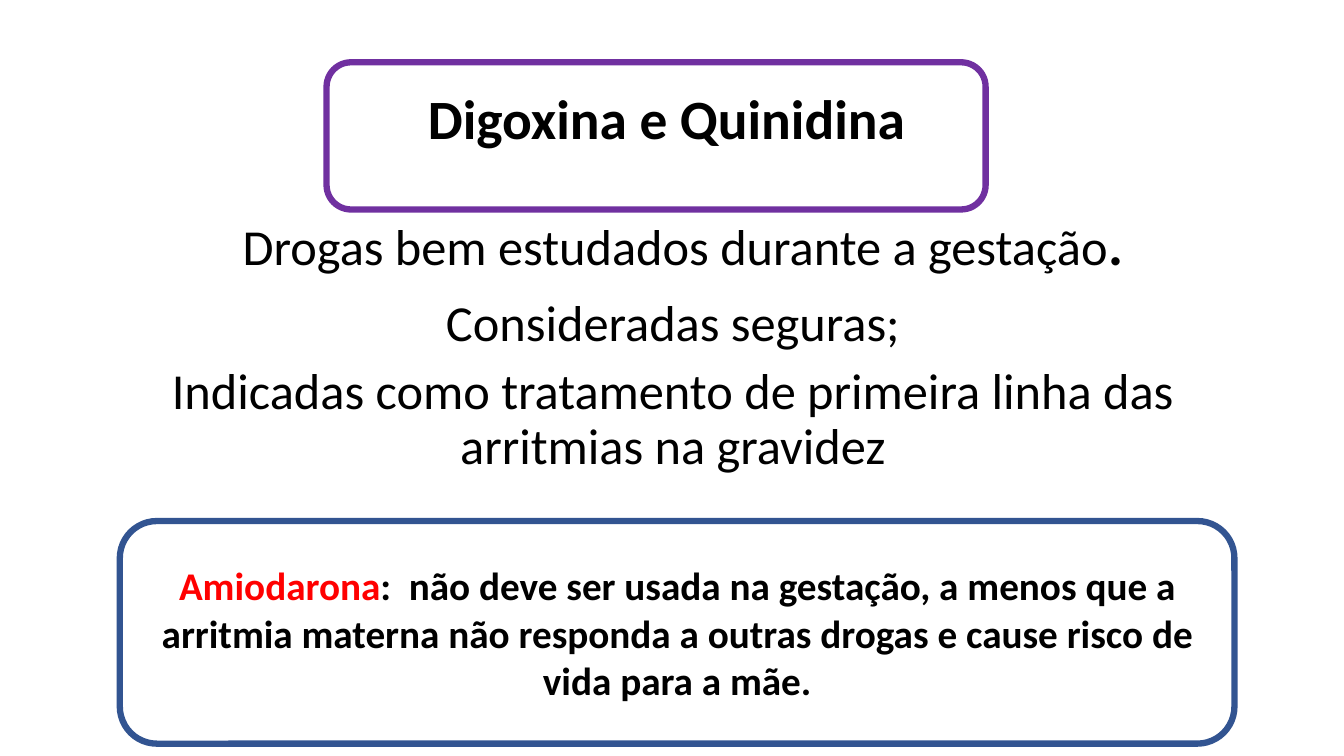
"""Slide on antiarrhythmic drugs in pregnancy: digoxin, quinidine and amiodarone."""
from pptx import Presentation
from pptx.dml.color import RGBColor
from pptx.enum.shapes import MSO_SHAPE
from pptx.enum.text import MSO_ANCHOR as ANCHOR, PP_ALIGN as ALIGN
from pptx.util import Cm, Pt

COLORS = {"text": "000000", "alert": "FF0000", "blue": "325491", "purple": "7030A0"}


def add_runs(p, runs):
    p.alignment = ALIGN.CENTER
    for text, size, bold, color in runs:
        r = p.add_run()
        r.text = text
        r.font.name = "Calibri"
        r.font.size = Pt(size)
        r.font.bold = bold
        r.font.color.rgb = RGBColor.from_string(COLORS[color])


prs = Presentation()
prs.slide_width, prs.slide_height = Cm(33.87), Cm(19.05)
s = prs.slides.add_slide(prs.slide_layouts[6])

title = [[("Digoxina e Quinidina", 39.6, True, "text")]]
studied = [[("Drogas bem estudados durante a gestação", 36, False, "text"),
            (".", 40, True, "text")]]
usage = [[(text, 36, False, "text")] for text in (
    "Consideradas seguras;",
    "Indicadas como tratamento de primeira linha das arritmias na gravidez",
)]
warning = [("Amiodarona", 28, True, "alert"),
           (":  não deve ser usada na gestação, a menos que a arritmia materna "
            "não responda a outras drogas e cause risco de vida para a mãe.",
            28, True, "text")]

text_boxes = [
    (3.45, 2.31, 3, ANCHOR.TOP, 0, 0, title),
    (3.86, 4.78, 2.34, ANCHOR.BOTTOM, 0.13, 0, studied),
    (3.61, 7.37, 6.17, ANCHOR.TOP, 0.13, 10, usage),
]
for left, top, height, anchor, margin, space, paragraphs in text_boxes:
    tf = s.shapes.add_textbox(Cm(left), Cm(top), Cm(26.7), Cm(height)).text_frame
    tf.word_wrap = True
    tf.vertical_anchor = anchor
    tf.margin_top = Cm(margin)
    for i, runs in enumerate(paragraphs):
        p = tf.add_paragraph() if i else tf.paragraphs[0]
        p.line_spacing = 0.9
        p.space_before = Pt(space)
        add_runs(p, runs)

frames = [
    (3.02, 13.13, 28.09, 5.61, "blue", warning),
    (8.23, 1.57, 16.61, 3.71, "purple", []),
]
for left, top, width, height, color, runs in frames:
    sp = s.shapes.add_shape(MSO_SHAPE.ROUNDED_RECTANGLE,
                            Cm(left), Cm(top), Cm(width), Cm(height))
    sp.shadow.inherit = False
    sp.fill.background()
    sp.line.color.rgb = RGBColor.from_string(COLORS[color])
    sp.line.width = Pt(4.5)
    tf = sp.text_frame
    tf.word_wrap = True
    tf.vertical_anchor = ANCHOR.MIDDLE
    add_runs(tf.paragraphs[0], runs)

prs.save("out.pptx")
